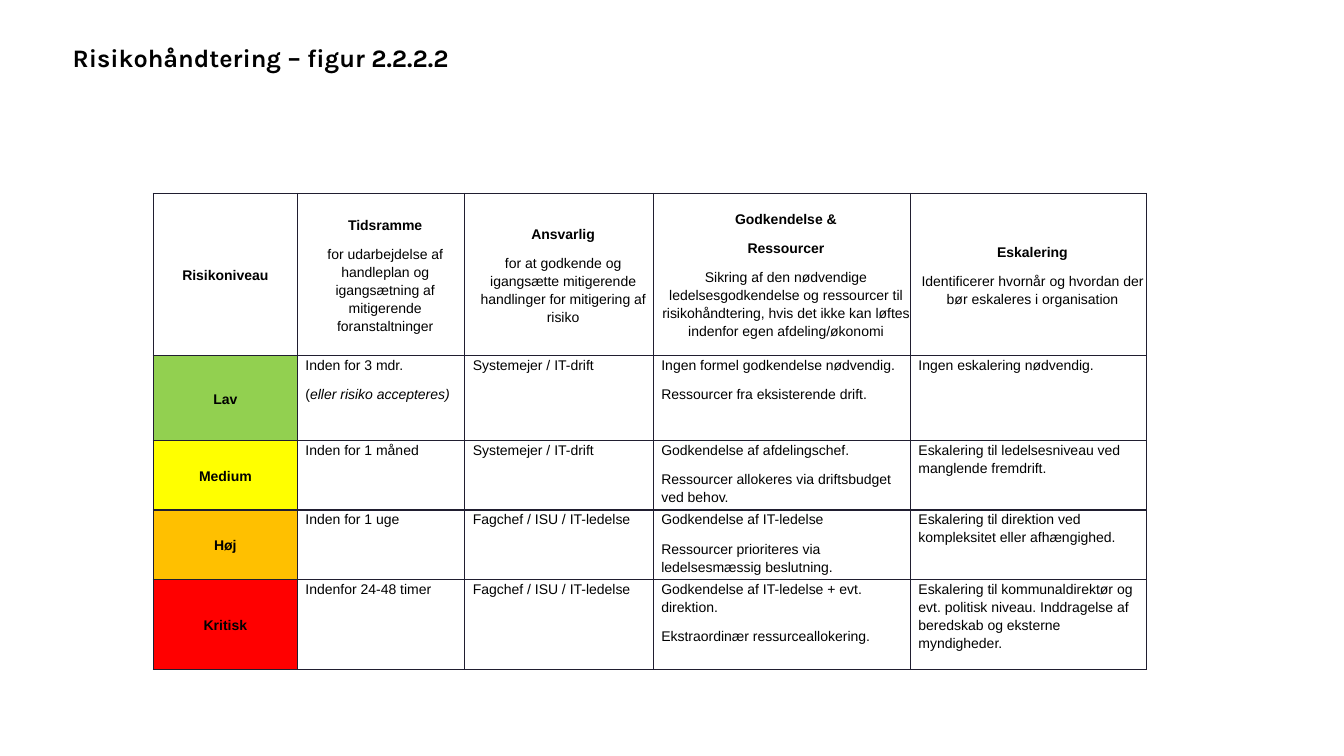
import pptx
import pptx.util
import pptx.dml.color
import pptx.enum.text
import pptx.oxml
import pptx.oxml.ns

Inches, Pt = pptx.util.Inches, pptx.util.Pt
RGBColor = pptx.dml.color.RGBColor
PP_ALIGN = pptx.enum.text.PP_ALIGN
MSO_ANCHOR = pptx.enum.text.MSO_ANCHOR

TITLE = "Risikohåndtering – figur 2.2.2.2"
HEADERS = [
    (["Risikoniveau"], ""),
    (["Tidsramme"], "for udarbejdelse af handleplan og igangsætning af mitigerende foranstaltninger"),
    (["Ansvarlig"], "for at godkende og igangsætte mitigerende handlinger for mitigering af risiko"),
    (["Godkendelse &", "Ressourcer"],
     "Sikring af den nødvendige ledelsesgodkendelse og ressourcer til risikohåndtering, "
     "hvis det ikke kan løftes indenfor egen afdeling/økonomi"),
    (["Eskalering"], "Identificerer hvornår og hvordan der bør eskaleres i organisation"),
]
LEVELS = [
    ("Lav", ["Inden for 3 mdr.", ("(", "eller risiko accepteres)")],
     ["Systemejer / IT-drift"],
     ["Ingen formel godkendelse nødvendig.", "Ressourcer fra eksisterende drift."],
     ["Ingen eskalering nødvendig."]),
    ("Medium", ["Inden for 1 måned"],
     ["Systemejer / IT-drift"],
     ["Godkendelse af afdelingschef.", "Ressourcer allokeres via driftsbudget ved behov."],
     ["Eskalering til ledelsesniveau ved manglende fremdrift."]),
    ("Høj", ["Inden for 1 uge"],
     ["Fagchef / ISU / IT-ledelse"],
     ["Godkendelse af IT-ledelse", "Ressourcer prioriteres via ledelsesmæssig beslutning."],
     ["Eskalering til direktion ved kompleksitet eller afhængighed."]),
    ("Kritisk", ["Indenfor 24-48 timer"],
     ["Fagchef / ISU / IT-ledelse"],
     ["Godkendelse af IT-ledelse + evt. direktion.", "Ekstraordinær ressurceallokering."],
     ["Eskalering til kommunaldirektør og evt. politisk niveau. "
      "Inddragelse af beredskab og eksterne myndigheder."]),
]

BLACK = RGBColor(0, 0, 0)
WHITE = RGBColor(255, 255, 255)
BORDER = RGBColor(0x20, 0x1E, 0x30)
LEVEL_COLOURS = [RGBColor(0x92, 0xD0, 0x50), RGBColor(0xFF, 0xFF, 0x00),
                 RGBColor(0xFF, 0xC0, 0x00), RGBColor(0xFF, 0x00, 0x00)]
COLUMNS = [1.43, 1.66, 1.87, 2.55, 2.34]
ROWS = [1.61, 0.84, 0.69, 0.69, 0.89]
TABLE_LEFT, TABLE_TOP = 1.52, 1.92


def set_font(span, name, size, bold=False, italic=False):
    span.font.name = name
    span.font.size = Pt(size)
    span.font.bold = bold
    span.font.italic = italic
    span.font.color.rgb = BLACK


def add_borders(cell):
    properties = cell._tc.get_or_add_tcPr()
    for index, side in enumerate(("lnL", "lnR", "lnT", "lnB")):
        properties.insert(index, pptx.oxml.parse_xml(
            f'<a:{side} {pptx.oxml.ns.nsdecls("a")} w="{Pt(1)}"><a:solidFill>'
            f'<a:srgbClr val="{BORDER}"/></a:solidFill></a:{side}>'))


def fill_cell(cell, lines, bold_lines=0, centred=False, colour=None, inset=0.08):
    cell.margin_left = Inches(inset)
    cell.margin_right = cell.margin_top = cell.margin_bottom = 0
    cell.vertical_anchor = MSO_ANCHOR.MIDDLE if centred else MSO_ANCHOR.TOP
    if colour is None:
        cell.fill.background()
    else:
        cell.fill.solid()
        cell.fill.fore_color.rgb = colour
    add_borders(cell)
    frame = cell.text_frame
    for number, line in enumerate(lines):
        para = frame.add_paragraph() if number else frame.paragraphs[0]
        para.alignment = PP_ALIGN.CENTER if centred else PP_ALIGN.LEFT
        para.line_spacing = 1.15
        para.space_after = Pt(8)
        parts = line if isinstance(line, tuple) else (line,)
        for position, part in enumerate(parts):
            span = para.add_run()
            span.text = part
            set_font(span, "Arial", 10, number < bold_lines, position > 0)


def add_title(page):
    title = page.shapes.title
    title.left, title.top = Inches(0.62), Inches(0.37)
    title.width, title.height = Inches(5.68), Inches(0.4)
    frame = title.text_frame
    frame.text = TITLE
    frame.word_wrap = True
    frame.vertical_anchor = MSO_ANCHOR.MIDDLE
    frame.paragraphs[0].alignment = PP_ALIGN.LEFT
    set_font(frame.paragraphs[0].runs[0], "Karla", 18, bold=True)


def add_risk_table(page):
    table = page.shapes.add_table(
        len(ROWS), len(COLUMNS), Inches(TABLE_LEFT), Inches(TABLE_TOP),
        Inches(sum(COLUMNS)), Inches(sum(ROWS))).table
    table.first_row = table.horz_banding = False
    for column, width in zip(table.columns, COLUMNS):
        column.width = Inches(width)
    for row, height in zip(table.rows, ROWS):
        row.height = Inches(height)
    for column, (heading, detail) in enumerate(HEADERS):
        lines = heading + [detail] if detail else heading
        fill_cell(table.cell(0, column), lines, len(heading), True, WHITE,
                  0.08 if column else 0)
    for row, ((level, *answers), colour) in enumerate(zip(LEVELS, LEVEL_COLOURS), 1):
        fill_cell(table.cell(row, 0), [level], 1, True, colour, 0)
        for column, lines in enumerate(answers, 1):
            fill_cell(table.cell(row, column), lines)


def main():
    deck = pptx.Presentation()
    deck.slide_width, deck.slide_height = Inches(13.33), Inches(7.5)
    page = deck.slides.add_slide(deck.slide_layouts.get_by_name("Title Only"))
    add_title(page)
    add_risk_table(page)
    deck.save("out.pptx")


if __name__ == "__main__":
    main()
